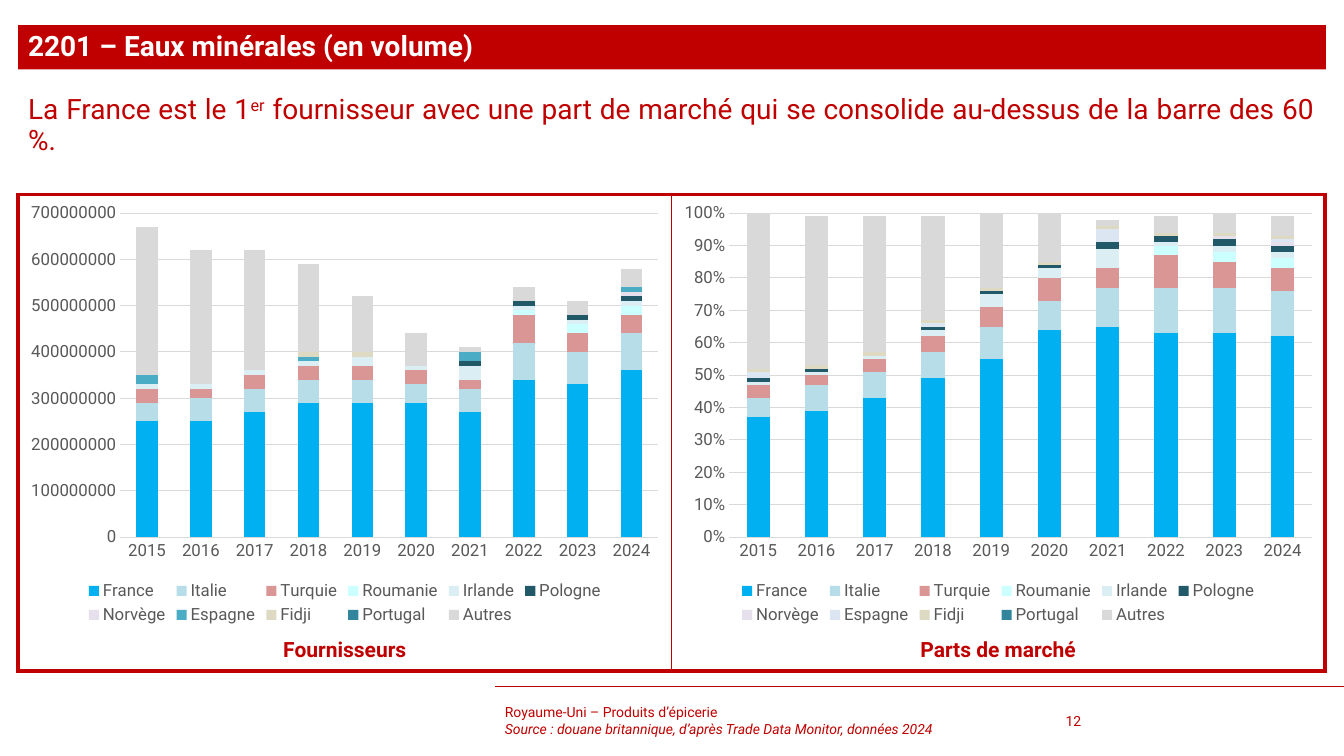
from lxml.etree import SubElement
from pptx import Presentation
from pptx.chart.data import CategoryChartData
from pptx.dml.color import RGBColor
from pptx.enum.chart import XL_CHART_TYPE, XL_LEGEND_POSITION, XL_TICK_MARK
from pptx.enum.shapes import MSO_CONNECTOR, MSO_SHAPE
from pptx.enum.text import MSO_ANCHOR, PP_ALIGN
from pptx.oxml import parse_xml
from pptx.oxml.ns import nsdecls, qn
from pptx.util import Inches, Pt

FONT = "Roboto"
COLORS = {"red": "C00000", "white": "FFFFFF", "label": "595959", "grid": "D9D9D9"}
SUPPLIER_COLORS = {
    "France": "00B0F0", "Italie": "B7DEE8", "Turquie": "D99694",
    "Roumanie": "CCFFFF", "Irlande": "DBEEF4", "Pologne": "215968",
    "Norvège": "E6E0EC", "Espagne": "4BACC6", "Fidji": "DDD9C3",
    "Portugal": "31859C", "Autres": "D9D9D9",
}
YEARS = [str(year) for year in range(2015, 2025)]
VOLUME_UNIT = 10_000_000
VOLUMES = {
    "France": [25, 25, 27, 29, 29, 29, 27, 34, 33, 36],
    "Italie": [4, 5, 5, 5, 5, 4, 5, 8, 7, 8],
    "Turquie": [3, 2, 3, 3, 3, 3, 2, 6, 4, 4],
    "Roumanie": [0, 0, 0, 0, 0, 0, 0, 1, 2, 2],
    "Irlande": [1, 1, 1, 1, 2, 1, 3, 1, 1, 1],
    "Pologne": [0, 0, 0, 0, 0, 0, 1, 1, 1, 1],
    "Norvège": [0, 0, 0, 0, 0, 0, 0, 0, 0, 1],
    "Espagne": [2, 0, 0, 1, 0, 0, 2, 0, 0, 1],
    "Fidji": [0, 0, 0, 1, 1, 0, 0, 0, 0, 0],
    "Portugal": [0] * 10,
    "Autres": [32, 29, 26, 19, 12, 7, 1, 3, 3, 4],
}
SHARES = {
    "France": [37, 39, 43, 49, 55, 64, 65, 63, 63, 62],
    "Italie": [6, 8, 8, 8, 10, 9, 12, 14, 14, 14],
    "Turquie": [4, 3, 4, 5, 6, 7, 6, 10, 8, 7],
    "Roumanie": [0, 0, 0, 0, 0, 0, 0, 3, 3, 3],
    "Irlande": [1, 1, 1, 2, 4, 3, 6, 1, 2, 2],
    "Pologne": [1, 1, 0, 1, 1, 1, 2, 2, 2, 2],
    "Norvège": [0, 0, 0, 0, 0, 0, 0, 0, 1, 1],
    "Espagne": [2, 0, 0, 1, 0, 0, 4, 0, 0, 1],
    "Fidji": [1] * 10,
    "Portugal": [0] * 10,
    "Autres": [48, 46, 42, 32, 23, 15, 2, 5, 6, 6],
}
LEFT, PANEL_TOP, PANEL_WIDTH, PANEL_HEIGHT = 0.18, 1.93, 6.48, 4.73


def rgb(name):
    """Return the colour called name."""
    return RGBColor.from_string(COLORS[name])


def style_font(font, size, color, bold=False, italic=False):
    """Set face, size, colour and weight of a font."""
    font.name, font.size, font.bold, font.italic = FONT, Pt(size), bold, italic
    font.color.rgb = rgb(color)


def write(frame, text, size=10, color="red", bold=False, italic=False, superscript=False,
          align=PP_ALIGN.LEFT, anchor=MSO_ANCHOR.TOP, spacing=None, same_line=False):
    """Append text to a frame, as a new paragraph unless same_line is set."""
    frame.word_wrap = True
    frame.vertical_anchor = anchor
    paragraph = frame.paragraphs[-1]
    if paragraph.runs and not same_line:
        paragraph = frame.add_paragraph()
    paragraph.alignment = align
    if spacing:
        paragraph.line_spacing = spacing
    run = paragraph.add_run()
    run.text = text
    style_font(run.font, size, color, bold, italic)
    if superscript:
        run._r.get_or_add_rPr().set("baseline", "30000")


def add_text_area(slide, left, top, width, height):
    """Add an empty text box and return its frame."""
    return slide.shapes.add_textbox(
        Inches(left), Inches(top), Inches(width), Inches(height)).text_frame


def add_banner(slide, title):
    """Add the red title banner."""
    banner = slide.shapes.add_shape(
        MSO_SHAPE.RECTANGLE, Inches(LEFT), Inches(0.25), Inches(12.97), Inches(0.44))
    banner.shadow.inherit = False
    banner.fill.solid()
    banner.fill.fore_color.rgb = rgb("red")
    banner.line.fill.background()
    write(banner.text_frame, title, size=20, color="white", bold=True,
          anchor=MSO_ANCHOR.MIDDLE, spacing=0.9)


def add_rule(slide):
    """Add the thin line above the footer."""
    rule = slide.shapes.add_connector(
        MSO_CONNECTOR.STRAIGHT, Inches(13.33), Inches(6.81), Inches(4.91), Inches(6.81))
    rule.line.color.rgb = rgb("red")
    rule.line.width = Pt(0.5)
    SubElement(rule._element.spPr, qn("a:effectLst"))


def set_borders(cell, widths):
    """Draw red cell borders, widths in points for left, right, top and bottom."""
    cell.fill.background()
    properties = cell._tc.get_or_add_tcPr()
    for index, (side, width) in enumerate(zip("LRTB", widths)):
        properties.insert(index, parse_xml(
            f'<a:ln{side} {nsdecls("a")} w="{Pt(width)}"><a:solidFill>'
            f'<a:srgbClr val="{COLORS["red"]}"/></a:solidFill></a:ln{side}>'))


def add_panels(slide):
    """Add the two-cell frame around the charts."""
    panels = slide.shapes.add_table(
        1, 2, Inches(LEFT), Inches(PANEL_TOP), Inches(2 * PANEL_WIDTH),
        Inches(PANEL_HEIGHT)).table
    panels.first_row = panels.horz_banding = False
    set_borders(panels.cell(0, 0), (3, 1, 3, 3))
    set_borders(panels.cell(0, 1), (1, 3, 3, 3))


def style_axis(axis):
    """Style the labels of an axis and hide its tick marks."""
    axis.major_tick_mark = axis.minor_tick_mark = XL_TICK_MARK.NONE
    style_font(axis.tick_labels.font, 12, "label")


def add_stacked_chart(slide, left, values, unit, maximum, step, number_format, colors):
    """Add a stacked column chart of suppliers by year."""
    data = CategoryChartData(number_format=number_format)
    data.categories = YEARS
    for supplier, row in values.items():
        data.add_series(supplier, [value * unit if unit > 1 else value / 100 for value in row])
    chart = slide.shapes.add_chart(
        XL_CHART_TYPE.COLUMN_STACKED, Inches(left), Inches(PANEL_TOP),
        Inches(PANEL_WIDTH), Inches(4.31), data).chart
    style_font(chart.font, 12, "label")
    chart.has_title = False
    chart.has_legend = True
    chart.legend.position = XL_LEGEND_POSITION.BOTTOM
    chart.legend.include_in_layout = False
    style_font(chart.legend.font, 12, "label")

    years, amounts = chart.category_axis, chart.value_axis
    style_axis(years)
    years.format.line.color.rgb = rgb("grid")
    years.format.line.width = Pt(0.75)
    style_axis(amounts)
    amounts.format.line.fill.background()
    amounts.minimum_scale, amounts.maximum_scale, amounts.major_unit = 0, maximum, step
    amounts.tick_labels.number_format = number_format
    amounts.tick_labels.number_format_is_linked = False
    amounts.major_gridlines.format.line.color.rgb = rgb("grid")
    amounts.major_gridlines.format.line.width = Pt(0.75)

    columns = chart.plots[0]
    columns.gap_width, columns.overlap, columns.vary_by_categories = 150, 100, False
    for supplier in columns.series:
        supplier.format.fill.solid()
        supplier.format.fill.fore_color.rgb = RGBColor.from_string(colors[supplier.name])


def main():
    """Build the slide and save it."""
    deck = Presentation()
    deck.slide_width, deck.slide_height = Inches(13.33), Inches(7.5)
    slide = deck.slides.add_slide(deck.slide_layouts[6])

    add_rule(slide)
    add_panels(slide)
    for column, caption in enumerate(("Fournisseurs", "Parts de marché")):
        write(add_text_area(slide, LEFT + column * PANEL_WIDTH, 6.27, PANEL_WIDTH, 0.35),
              caption, size=15, bold=True, align=PP_ALIGN.CENTER)

    footer = add_text_area(slide, 4.91, 6.95, 5.43, 0.4)
    write(footer, "Royaume-Uni – Produits d’épicerie", anchor=MSO_ANCHOR.MIDDLE)
    write(footer, "Source : douane britannique, d’après Trade Data Monitor, données 2024",
          italic=True, anchor=MSO_ANCHOR.MIDDLE)
    write(add_text_area(slide, 10.47, 6.95, 0.99, 0.4), "12", anchor=MSO_ANCHOR.MIDDLE)

    add_banner(slide, "2201 – Eaux minérales (en volume)")
    message = add_text_area(slide, LEFT, 0.9, 2 * PANEL_WIDTH, 0.81)
    for text, raised in (
            ("La France est le 1", False), ("er", True),
            (" fournisseur avec une part de marché qui se consolide "
             "au-dessus de la barre des 60 %.", False)):
        write(message, text, size=20, superscript=raised, align=PP_ALIGN.JUSTIFY,
              spacing=0.9, same_line=True)

    add_stacked_chart(slide, LEFT, VOLUMES, VOLUME_UNIT, 700_000_000, 100_000_000,
                      "General", SUPPLIER_COLORS)
    add_stacked_chart(slide, LEFT + PANEL_WIDTH, SHARES, 0.01, 1, 0.1, "0%",
                      {**SUPPLIER_COLORS, "Espagne": "DCE6F2"})
    deck.save("out.pptx")


if __name__ == "__main__":
    main()
